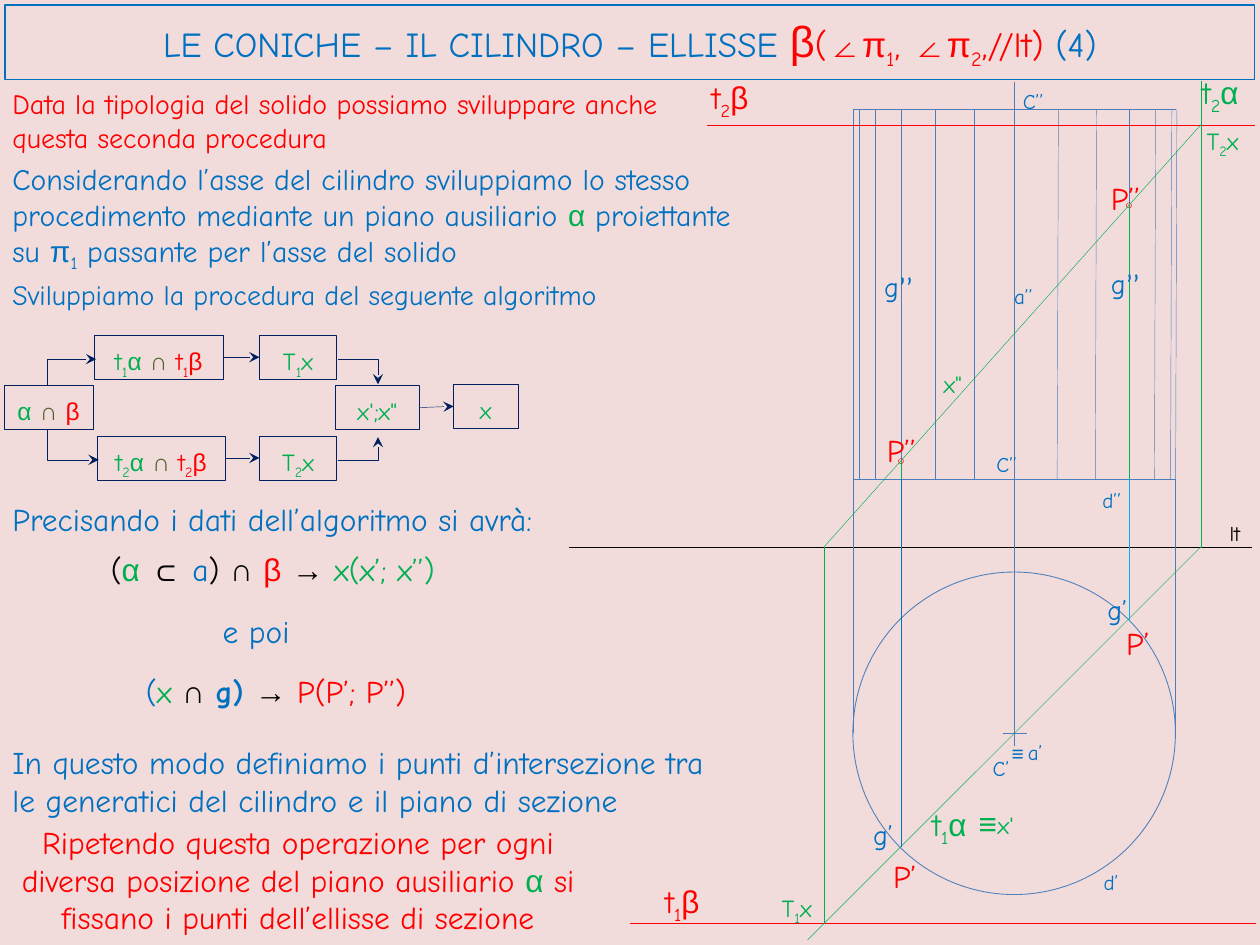
from itertools import groupby

from lxml import etree
from pptx import Presentation
from pptx.dml.color import RGBColor
from pptx.enum.shapes import MSO_CONNECTOR, MSO_SHAPE
from pptx.enum.text import MSO_ANCHOR, PP_ALIGN
from pptx.oxml.ns import qn
from pptx.util import Pt

STRAIGHT, ELBOW = MSO_CONNECTOR.STRAIGHT, MSO_CONNECTOR.ELBOW
RECT, OVAL = MSO_SHAPE.RECTANGLE, MSO_SHAPE.OVAL
LEFT, CENTER = PP_ALIGN.LEFT, PP_ALIGN.CENTER
MIDDLE, TOP = MSO_ANCHOR.MIDDLE, MSO_ANCHOR.TOP

PINK = RGBColor(0xF2, 0xDC, 0xDB)
BLUE = RGBColor(0x00, 0x70, 0xC0)
STEEL = RGBColor(0x4B, 0x7E, 0xBC)
RING = RGBColor(0x4F, 0x81, 0xBD)
SKY = RGBColor(0x00, 0xB0, 0xF0)
NAVY = RGBColor(0x00, 0x20, 0x60)
RED = RGBColor(0xFF, 0x00, 0x00)
GREEN = RGBColor(0x00, 0xB0, 0x50)
OLIVE = RGBColor(0x4F, 0x62, 0x28)
BLACK = RGBColor(0x00, 0x00, 0x00)

SUBS = "12"
SIGNS = "αβπ∩⊂≡→∠"


def kind(char):
    """Tell subscripts, mathematical signs and plain letters apart."""
    return "sub" if char in SUBS else "sign" if char in SIGNS else "plain"


def write(frame, parts, size, align=LEFT):
    """Fill the frame with coloured parts and return its paragraph."""
    par = frame.paragraphs[0]
    par.alignment = align
    for words, color in parts:
        for sort, chars in groupby(words, kind):
            run = par.add_run()
            run.text = "".join(chars)
            font = run.font
            font.size = Pt(size)
            font.color.rgb = color
            font.name = "Arial" if sort == "sign" else "Comic Neue"
            if sort == "sub":
                font._element.set("baseline", "-25000")
    return par


def label(slide, x, y, w, h, parts, size, align=LEFT, wrap=True):
    """Add a text box and return its paragraph."""
    frame = slide.shapes.add_textbox(Pt(x), Pt(y), Pt(w), Pt(h)).text_frame
    frame.word_wrap = wrap
    return write(frame, parts, size, align)


def space(par):
    """Apply the loose spacing of the step labels."""
    par.line_spacing = 1.15
    par.space_after = Pt(10)


def outline(slide, form, x, y, w, h, color, width):
    """Add an unfilled shape."""
    shape = slide.shapes.add_shape(form, Pt(x), Pt(y), Pt(w), Pt(h))
    shape.shadow.inherit = False
    shape.fill.background()
    shape.line.color.rgb = color
    shape.line.width = Pt(width)
    return shape


def step(slide, x, y, w, parts):
    """Add one box of the algorithm."""
    box = outline(slide, RECT, x, y, w, 25.2, NAVY, 0.25)
    box.text_frame.word_wrap = True
    box.text_frame.vertical_anchor = TOP
    space(write(box.text_frame, parts, 14, CENTER))
    return box


def line(slide, x1, y1, x2, y2, color, form=STRAIGHT):
    """Add a thin line."""
    wire = slide.shapes.add_connector(form, Pt(x1), Pt(y1), Pt(x2), Pt(y2))
    wire.line.color.rgb = color
    wire.line.width = Pt(0.25)
    etree.SubElement(wire._element.spPr, qn("a:effectLst"))
    return wire


def point(wire, end):
    """Put a stealth arrowhead on one end of a line."""
    etree.SubElement(wire.line._get_or_add_ln(), qn(end)).set("type", "stealth")


def join(slide, first, last):
    """Draw an arrow from one box to the box on its right."""
    wire = line(slide, 0, 0, 9, 9, NAVY)
    wire.begin_connect(first, 3)
    wire.end_connect(last, 1)
    point(wire, "a:tailEnd")


def bend(slide, x1, y1, x2, y2, end):
    """Draw an arrow that runs across first and then up or down."""
    wire = line(slide, x1, y1, x2, y2, NAVY, ELBOW)
    geom = wire._element.spPr.find(qn("a:prstGeom"))
    guide = etree.SubElement(geom.find(qn("a:avLst")), qn("a:gd"))
    guide.set("name", "adj1")
    guide.set("fmla", "val 100000")
    point(wire, end)


def head(slide):
    """Format the title."""
    title = slide.shapes.title
    title.left, title.top, title.width, title.height = Pt(2.9), Pt(2.9), Pt(714.2), Pt(42.5)
    title.line.color.rgb = BLUE
    title.line.width = Pt(0.75)
    title.text_frame.vertical_anchor = MIDDLE
    par = write(title.text_frame, [("LE CONICHE – IL CILINDRO – ELLISSE ", BLUE),
                                   ("β(∠π1, ∠π2,//lt)", RED), (" (4)", BLUE)], 20, CENTER)
    for run in par.runs:
        if run.text == "β":
            run.font.size = Pt(24.8)


def draft(slide):
    """Draw the cylinder, the planes and the section."""
    line(slide, 325.4, 312.5, 715.7, 312.5, BLACK)
    outline(slide, OVAL, 487.4, 326.9, 184.3, 184.3, RING, 0.5)
    for x in (487.4, 671.8):
        line(slide, x, 419, x, 273.6, STEEL)
    for y in (273.6, 62.5):
        line(slide, 487.4, y, 672, y, STEEL)
    line(slide, 579.8, 46.8, 579.8, 419, STEEL)
    line(slide, 579.8, 411.8, 579.8, 426.2, STEEL)
    line(slide, 573, 419, 587, 419, STEEL)
    for x in (487.4, 491, 500.4, 514.8, 534.2, 556.6, 645.1):
        line(slide, x, 273.6, x, 62.2, STEEL)
    for x in (604.1, 625.9, 659.7, 668.9, 671.8):
        line(slide, x, 273.6, x + 0.7, 62.5, STEEL)
    for x1, x2, y in ((403.9, 717.1, 71.3), (360, 717.8, 527.8)):
        line(slide, x1, y, x2, y, RED)
    for x, y in ((513.4, 262.1), (643.7, 115.9)):
        outline(slide, OVAL, x, y, 2.9, 2.9, RED, 0.25)
    for ends in ((686.2, 312.5, 461.5, 537.1), (470.9, 312.5, 470.9, 527.8),
                 (686.2, 46.1, 686.2, 313.2), (470.9, 312.5, 686.2, 71.3),
                 (514.8, 263.5, 514.8, 483.8), (645.1, 117.4, 645.1, 355)):
        line(slide, *ends, GREEN)
    line(slide, 514.8, 273.6, 514.8, 483.8, BLUE)
    line(slide, 645.1, 273.6, 645.1, 355, SKY)


def names(slide):
    """Name the points, lines and traces of the drawing."""
    for x, y, w, words, color, size in (
            (562.3, 254.2, 37.4, "C’’", BLUE, 12), (577.4, 46.8, 37.4, "C’’", BLUE, 12),
            (560.2, 428.4, 28, "C’", BLUE, 12), (695.5, 293.8, 27.4, "lt", BLACK, 12),
            (622.8, 275, 27.4, "d’’", BLUE, 12), (623.5, 493.2, 26, "d’", BLUE, 12),
            (572.4, 158.4, 27.4, "a’’", BLUE, 12), (580.3, 419, 27.4, "a’", BLUE, 12),
            (571, 419.8, 24, "≡", BLUE, 12),
            (491.8, 463.7, 31.7, "g’", BLUE, 16), (625.7, 334.8, 31.7, "g’", BLUE, 16),
            (399.6, 41, 42.5, "t2β", RED, 18), (373, 500.4, 39.6, "t1β", RED, 18),
            (525.6, 456.5, 40.3, "t1α", GREEN, 18), (679.7, 38.2, 42.5, "t2α", GREEN, 18),
            (563, 459.4, 28, "x'", GREEN, 14), (532.1, 207.4, 28.8, "x\"", GREEN, 14),
            (636.5, 352.8, 28, "P’", RED, 18), (503.3, 486, 28, "P’", RED, 18),
            (499.7, 242.6, 31, "P’’", RED, 18), (627.8, 98.6, 31, "P’’", RED, 18)):
        label(slide, x, y, w, size * 1.6, [(words, color)], size)
    par = label(slide, 552.2, 455.8, 24.5, 28.8, [("≡", GREEN)], 18)
    par.runs[0].font.bold = True
    for x, y in ((498.2, 150.5), (627.8, 149)):
        par = label(slide, x, y, 33.8, 26.6, [("g", BLUE), ("’’", BLUE)], 16)
        par.runs[1].font.name = "Calibri"
    for x, y, words in ((436.3, 504, "T1x"), (679.7, 65.5, "T2x")):
        space(label(slide, x, y, 37.8, 25.2, [(words, GREEN)], 14, CENTER, False))


def flow(slide):
    """Draw the algorithm as a chain of boxes."""
    step(slide, 2.2, 220.3, 51.1, [("α ", GREEN), ("∩ ", OLIVE), ("β", RED)])
    both = step(slide, 191.5, 220.3, 48.2, [("x';x\"", GREEN)])
    last = step(slide, 259.2, 219.6, 36.7, [("x", GREEN)])
    join(slide, both, last)
    for num, x, y, start, stop in (("1", 54, 191.5, 220.3, 219.6),
                                   ("2", 55.4, 249.1, 245.5, 249.8)):
        pair = step(slide, x, y, 73.4, [(f"t{num}α ", GREEN), ("∩ ", OLIVE), (f"t{num}β", RED)])
        trace = step(slide, 148.3, y, 43.9, [(f"T{num}x", GREEN)])
        join(slide, pair, trace)
        mid = y + 13.7
        bend(slide, x + 1, mid, 27, start, "a:headEnd")
        bend(slide, 193, mid, 216, stop, "a:tailEnd")


def prose(slide):
    """Write the explanation and the formulas."""
    label(slide, 0, 46.1, 402.5, 46.1, [(
        "Data la tipologia del solido possiamo sviluppare anche questa seconda procedura", RED)], 16)
    label(slide, 0, 88.6, 427.7, 69.1, [
        ("Considerando l’asse del cilindro sviluppiamo lo stesso procedimento mediante un piano "
         "ausiliario ", BLUE), ("α", GREEN),
        (" proiettante su π1 passante per l’asse del solido", BLUE)], 17)
    label(slide, 0, 154.8, 375.8, 26.6, [
        ("Sviluppiamo la procedura del seguente algoritmo", BLUE)], 16)
    label(slide, 0, 282.2, 339.8, 28.8, [("Precisando i dati dell’algoritmo si avrà:", BLUE)], 18)
    plane = label(slide, 56.2, 311, 200.9, 28.8, [
        ("(", BLACK), ("α ", GREEN), ("⊂ ", BLACK), ("a", BLUE), (") ∩ ", BLACK),
        ("β ", RED), ("→ ", BLACK), ("x(x’; x’’)", GREEN)], 18)
    label(slide, 120.2, 346.3, 54.7, 28.8, [("e poi", BLUE)], 18)
    edge = label(slide, 76.3, 380.2, 182.9, 28.8, [
        ("(", BLUE), ("x", GREEN), (" ∩ ", BLACK), ("g) ", BLUE),
        ("→ ", BLACK), ("P(P’; P’’)", RED)], 18)
    for run in plane.runs + edge.runs:
        run.font.bold = run.text in ("∩", "g) ")
    label(slide, 0, 421.2, 419, 51.1, [(
        "In questo modo definiamo i punti d’intersezione tra le generatici del cilindro e il piano "
        "di sezione", BLUE)], 18)
    label(slide, 0, 466.6, 340.6, 72.7, [
        ("Ripetendo questa operazione per ogni diversa posizione del piano ausiliario ", RED),
        ("α", GREEN), (" si fissano i punti dell’ellisse di sezione", RED)], 18, CENTER)


def main():
    """Build the slide and save it."""
    deck = Presentation()
    deck.slide_width, deck.slide_height = Pt(720), Pt(540)
    slide = deck.slides.add_slide(deck.slide_layouts[5])
    slide.background.fill.solid()
    slide.background.fill.fore_color.rgb = PINK
    for part in (head, draft, names, flow, prose):
        part(slide)
    deck.save("out.pptx")


if __name__ == "__main__":
    main()
